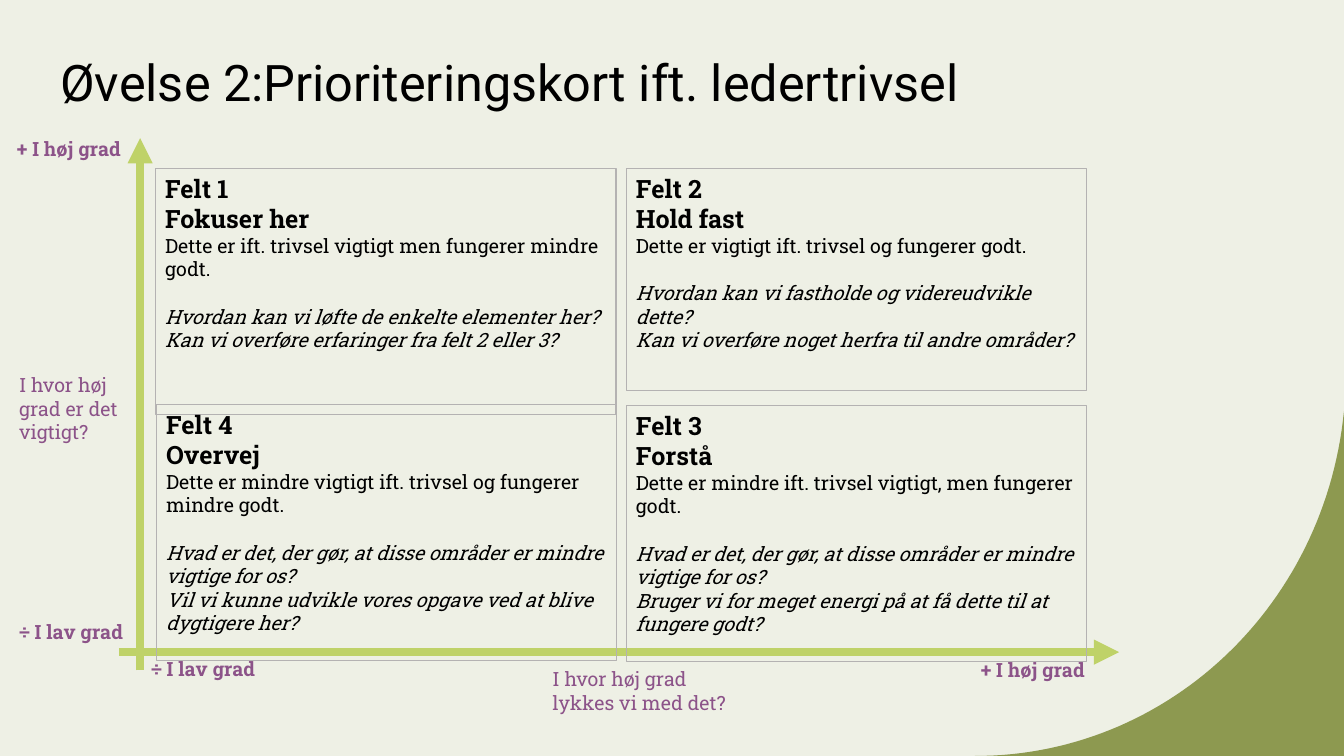
from dataclasses import dataclass

from lxml import etree
from pptx import Presentation
from pptx import util as u
from pptx.dml.color import RGBColor
from pptx.enum import shapes, text
from pptx.oxml.ns import qn


@dataclass(frozen=True)
class Theme:
    """Colours, fonts and type sizes of the slide."""
    background: str = "EEF0E5"
    corner: str = "8D9950"
    axis: str = "BFD268"
    border: str = "B4B2B2"
    ink: str = "000000"
    label: str = "8C5389"
    title_font: str = "Roboto"
    body_font: str = "Roboto Slab"
    title_size: int = 36
    heading_size: int = 18
    body_size: int = 14


class PriorityMap:
    """Draws the elements of a priority map on one slide."""

    def __init__(self, slide, theme):
        self.slide = slide
        self.theme = theme
        fill = slide.background.fill
        fill.solid()
        fill.fore_color.rgb = RGBColor.from_string(theme.background)

    def style(self, paragraph, size, color, font=None, bold=False, italic=False):
        paragraph.alignment = text.PP_ALIGN.LEFT
        paragraph.font.name = font or self.theme.body_font
        paragraph.font.size = u.Pt(size)
        paragraph.font.bold = bold
        paragraph.font.italic = italic
        paragraph.font.color.rgb = RGBColor.from_string(color)

    def text_box(self, words, left, top, width, height):
        box = self.slide.shapes.add_textbox(*map(u.Inches, (left, top, width, height)))
        box.text_frame.word_wrap = True
        paragraph = box.text_frame.paragraphs[0]
        paragraph.text = words
        return box.text_frame, paragraph

    def title(self, words, *place):
        frame, paragraph = self.text_box(words, *place)
        frame.vertical_anchor = text.MSO_ANCHOR.MIDDLE
        self.style(paragraph, self.theme.title_size, self.theme.ink, self.theme.title_font)

    def label(self, words, *place, bold=False):
        _, paragraph = self.text_box(words, *place)
        self.style(paragraph, self.theme.body_size, self.theme.label, bold=bold)

    def corner(self, start, control_1, control_2, end, steps=60):
        curve = []
        for step in range(steps + 1):
            t = step / steps
            weights = ((1 - t) ** 3, 3 * t * (1 - t) ** 2, 3 * t * t * (1 - t), t ** 3)
            points = (start, control_1, control_2, end)
            curve.append(tuple(u.Inches(sum(w * point[axis] for w, point in zip(weights, points)))
                               for axis in (0, 1)))
        builder = self.slide.shapes.build_freeform(*curve[0], scale=1.0)
        builder.add_line_segments(curve[1:] + [(u.Inches(end[0]), u.Inches(start[1]))], close=True)
        shape = builder.convert_to_shape()
        shape.shadow.inherit = False
        shape.fill.solid()
        shape.fill.fore_color.rgb = RGBColor.from_string(self.theme.corner)
        shape.line.fill.background()

    def axis(self, *ends):
        connector = self.slide.shapes.add_connector(
            shapes.MSO_CONNECTOR.STRAIGHT, *map(u.Inches, ends))
        connector.line.color.rgb = RGBColor.from_string(self.theme.axis)
        connector.line.width = u.Pt(6)
        line = connector.line._get_or_add_ln()
        etree.SubElement(line, qn("a:tailEnd"), type="triangle")
        etree.SubElement(connector._element.spPr, qn("a:effectLst"))

    def field(self, place, headings, statement, questions):
        shape = self.slide.shapes.add_shape(
            shapes.MSO_SHAPE.RECTANGLE, *map(u.Inches, place))
        shape.shadow.inherit = False
        shape.fill.background()
        shape.line.color.rgb = RGBColor.from_string(self.theme.border)
        shape.line.width = u.Pt(0.75)
        frame = shape.text_frame
        frame.word_wrap = True
        frame.vertical_anchor = text.MSO_ANCHOR.TOP
        frame.text = "\n".join((*headings, statement, *questions))
        first_question = len(headings) + 1
        for index, paragraph in enumerate(frame.paragraphs):
            heading = index < len(headings)
            size = self.theme.heading_size if heading else self.theme.body_size
            self.style(paragraph, size, self.theme.ink,
                       bold=heading, italic=index >= first_question)
        frame.paragraphs[first_question].space_before = u.Pt(17)


FIELD_WIDTH = 4.57
FIELDS = [
    ((1.54, 1.67, FIELD_WIDTH, 2.44), ("Felt 1", "Fokuser her"),
     "Dette er ift. trivsel vigtigt men fungerer mindre godt.",
     ("Hvordan kan vi løfte de enkelte elementer her?",
      "Kan vi overføre erfaringer fra felt 2 eller 3?")),
    ((6.21, 1.67, FIELD_WIDTH, 2.2), ("Felt 2", "Hold fast"),
     "Dette er vigtigt ift. trivsel og fungerer godt.",
     ("Hvordan kan vi fastholde og videreudvikle dette?",
      "Kan vi overføre noget herfra til andre områder?")),
    ((6.21, 4.02, FIELD_WIDTH, 2.54), ("Felt 3", "Forstå"),
     "Dette er mindre ift. trivsel vigtigt, men fungerer godt.",
     ("Hvad er det, der gør, at disse områder er mindre vigtige for os?",
      "Bruger vi for meget energi på at få dette til at fungere godt?")),
    ((1.55, 4.01, FIELD_WIDTH, 2.54), ("Felt 4", "Overvej"),
     "Dette er mindre vigtigt ift. trivsel og fungerer mindre godt.",
     ("Hvad er det, der gør, at disse områder er mindre vigtige for os?",
      "Vil vi kunne udvikle vores opgave ved at blive dygtigere her?")),
]
HIGH, LOW = "+ I høj grad", "÷ I lav grad"
AXIS_ENDS = [(HIGH, 0.07, 1.31), (LOW, 0.09, 6.1), (LOW, 1.4, 6.47), (HIGH, 9.63, 6.48)]


def main():
    presentation = Presentation()
    presentation.slide_width = u.Inches(13.33)
    presentation.slide_height = u.Inches(7.5)
    slide = presentation.slides.add_slide(presentation.slide_layouts[6])
    priority_map = PriorityMap(slide, Theme())

    priority_map.corner((9.67, 7.5), (11.57, 7.5), (13.14, 6.02), (13.33, 4.08))
    priority_map.title("Øvelse 2:Prioriteringskort ift. ledertrivsel", 0.5, 0.35, 10.16, 0.92)
    priority_map.axis(1.39, 6.65, 1.39, 1.37)
    priority_map.axis(1.18, 6.47, 11.1, 6.47)
    for field in FIELDS:
        priority_map.field(*field)
    for words, left, top in AXIS_ENDS:
        priority_map.label(words, left, top, 1.39, 0.34, bold=True)
    priority_map.label("I hvor høj grad er det vigtigt?", 0.09, 3.65, 1.32, 0.81)
    priority_map.label("I hvor høj grad lykkes vi med det?", 5.38, 6.57, 1.92, 0.57)
    presentation.save("out.pptx")


if __name__ == "__main__":
    main()
